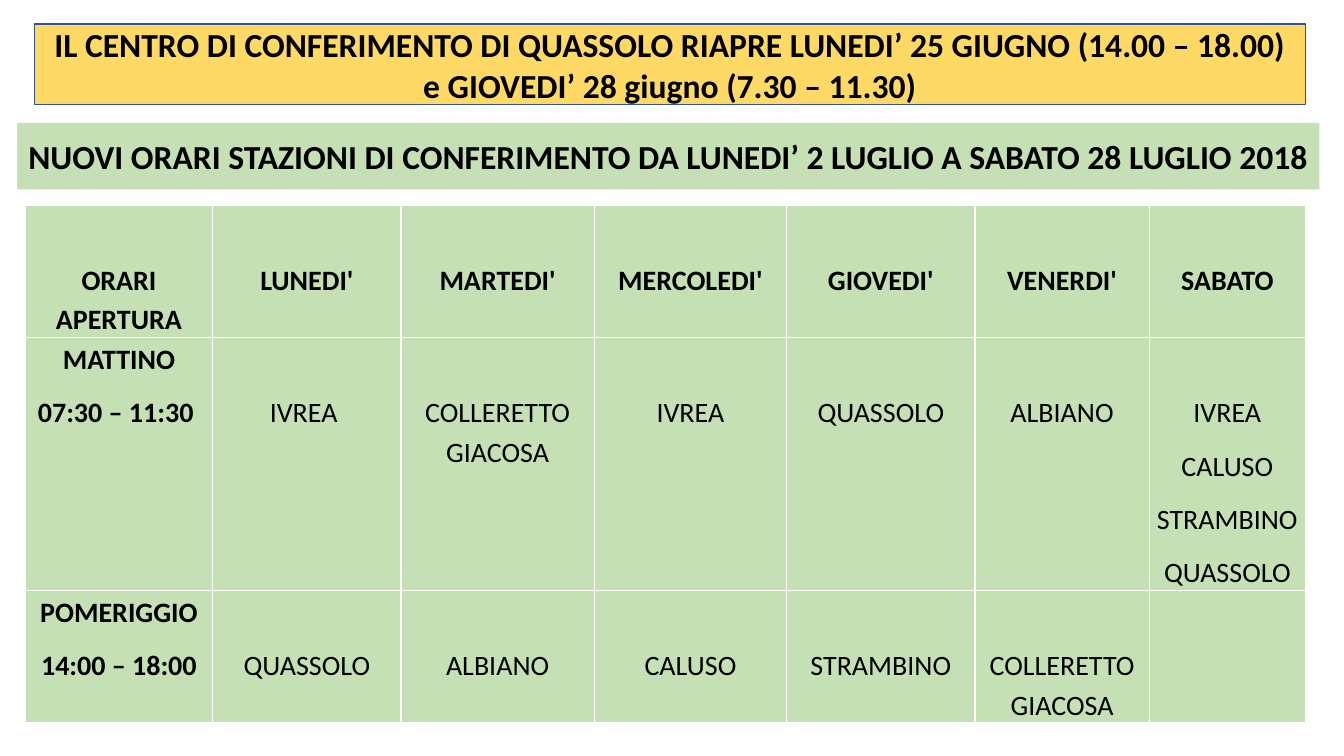
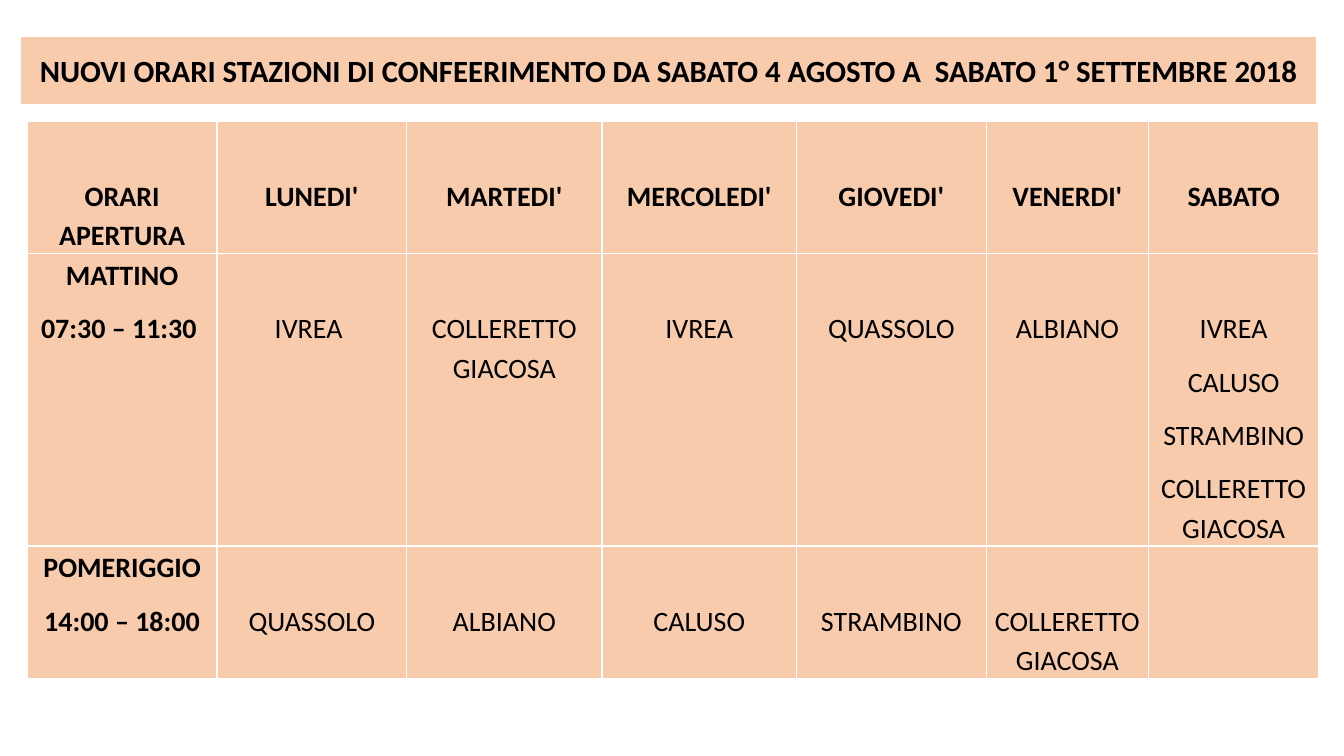
from pptx import Presentation
from pptx.dml.color import RGBColor
from pptx.enum.shapes import MSO_SHAPE
from pptx.enum.text import MSO_ANCHOR, MSO_AUTO_SIZE, PP_ALIGN
from pptx.util import Pt

GREEN = RGBColor(0xC5, 0xE0, 0xB4)
PEACH = RGBColor(0xF8, 0xCB, 0xAD)
GOLD = RGBColor(0xFF, 0xD9, 0x66)
BLUE = RGBColor(0x32, 0x54, 0x91)
BLACK = RGBColor(0, 0, 0)
FONT = "Calibri"
DROP = 38.2  # one text line plus the gap after it

HEAD = ["ORARI APERTURA", "LUNEDI'", "MARTEDI'", "MERCOLEDI'",
        "GIOVEDI'", "VENERDI'", "SABATO"]
MORNING = ["MATTINO\n07:30 – 11:30 ", "IVREA ", "COLLERETTO GIACOSA",
           "IVREA", "QUASSOLO", "ALBIANO"]
EVENING = ["POMERIGGIO\n14:00 – 18:00", "QUASSOLO", "ALBIANO", "CALUSO",
           "STRAMBINO", "COLLERETTO GIACOSA", ""]
SATURDAY = "IVREA\nCALUSO\nSTRAMBINO\n"


def style(para, size, bold):
    para.alignment = PP_ALIGN.CENTER
    font = para.font
    font.name, font.size, font.bold = FONT, Pt(size), bold
    font.color.rgb = BLACK


def band(shape, box, text, size, fill, edge=None):
    """Turn a shape or title into a filled strip of bold text."""
    shape.left, shape.top, shape.width, shape.height = map(Pt, box)
    shape.fill.solid()
    shape.fill.fore_color.rgb = fill
    if edge is not None:
        shape.line.color.rgb = edge
        shape.line.width = Pt(1)
    frame = shape.text_frame
    frame.word_wrap = True
    frame.auto_size = MSO_AUTO_SIZE.NONE
    frame.vertical_anchor = MSO_ANCHOR.MIDDLE
    frame.text = text
    style(frame.paragraphs[0], size, True)


def fill_cell(cell, text, fill, bold, drop):
    cell.fill.solid()
    cell.fill.fore_color.rgb = fill
    cell.margin_left = cell.margin_right = Pt(5)
    cell.margin_top = Pt(drop)
    cell.margin_bottom = 0
    cell.text = text
    for para in cell.text_frame.paragraphs:
        style(para, 20, bold)
        para.line_spacing = 1.15
        para.space_after = Pt(10)


def hours(slide, left, top, widths, heights, last, fill):
    """Weekly timetable; last is the fourth station open on Saturday."""
    rows = [HEAD, MORNING + [SATURDAY + last], EVENING]
    frame = slide.shapes.add_table(len(rows), len(HEAD), Pt(left), Pt(top),
                                   Pt(sum(widths)), Pt(sum(heights)))
    table = frame.table
    table.horz_banding = False
    for col, width in zip(table.columns, widths):
        col.width = Pt(width)
    for r, (row, height) in enumerate(zip(rows, heights)):
        table.rows[r].height = Pt(height)
        for c, text in enumerate(row):
            label = r > 0 and c == 0
            drop = DROP if text and not label else 0
            fill_cell(table.cell(r, c), text, fill, r == 0 or c == 0, drop)


def add_slide(deck):
    return deck.slides.add_slide(deck.slide_layouts[5])


def july(deck):
    slide = add_slide(deck)
    band(slide.shapes.title, (12.2, 87.8, 930.2, 47.5),
         "NUOVI ORARI STAZIONI DI CONFERIMENTO DA LUNEDI’ 2 LUGLIO "
         "A SABATO 28 LUGLIO 2018", 24, GREEN)
    hours(slide, 18, 146.5, [134, 134.5, 138, 137.5, 134.5, 124.5, 111.5],
          [93, 180, 94], "QUASSOLO", GREEN)
    notice = slide.shapes.add_shape(MSO_SHAPE.RECTANGLE, 0, 0, 0, 0)
    notice.shadow.inherit = False
    band(notice, (24.5, 17.3, 908, 57.6),
         "IL CENTRO DI CONFERIMENTO DI QUASSOLO RIAPRE LUNEDI’ 25 GIUGNO "
         "(14.00 – 18.00) e GIOVEDI’ 28 giugno (7.30 – 11.30)",
         24, GOLD, BLUE)


def august(deck):
    slide = add_slide(deck)
    band(slide.shapes.title, (15.8, 26.6, 923.8, 47.5),
         "NUOVI ORARI STAZIONI DI CONFEERIMENTO DA SABATO 4 AGOSTO "
         "A  SABATO 1° SETTEMBRE 2018", 22, PEACH, PEACH)
    hours(slide, 19.5, 86.5, [135.5, 135.5, 139.5, 139, 135.5, 116, 121.5],
          [93, 209, 94], "COLLERETTO GIACOSA", PEACH)


def main():
    deck = Presentation()
    deck.slide_width, deck.slide_height = Pt(960), Pt(540)
    july(deck)
    august(deck)
    deck.save("out.pptx")


if __name__ == "__main__":
    main()
